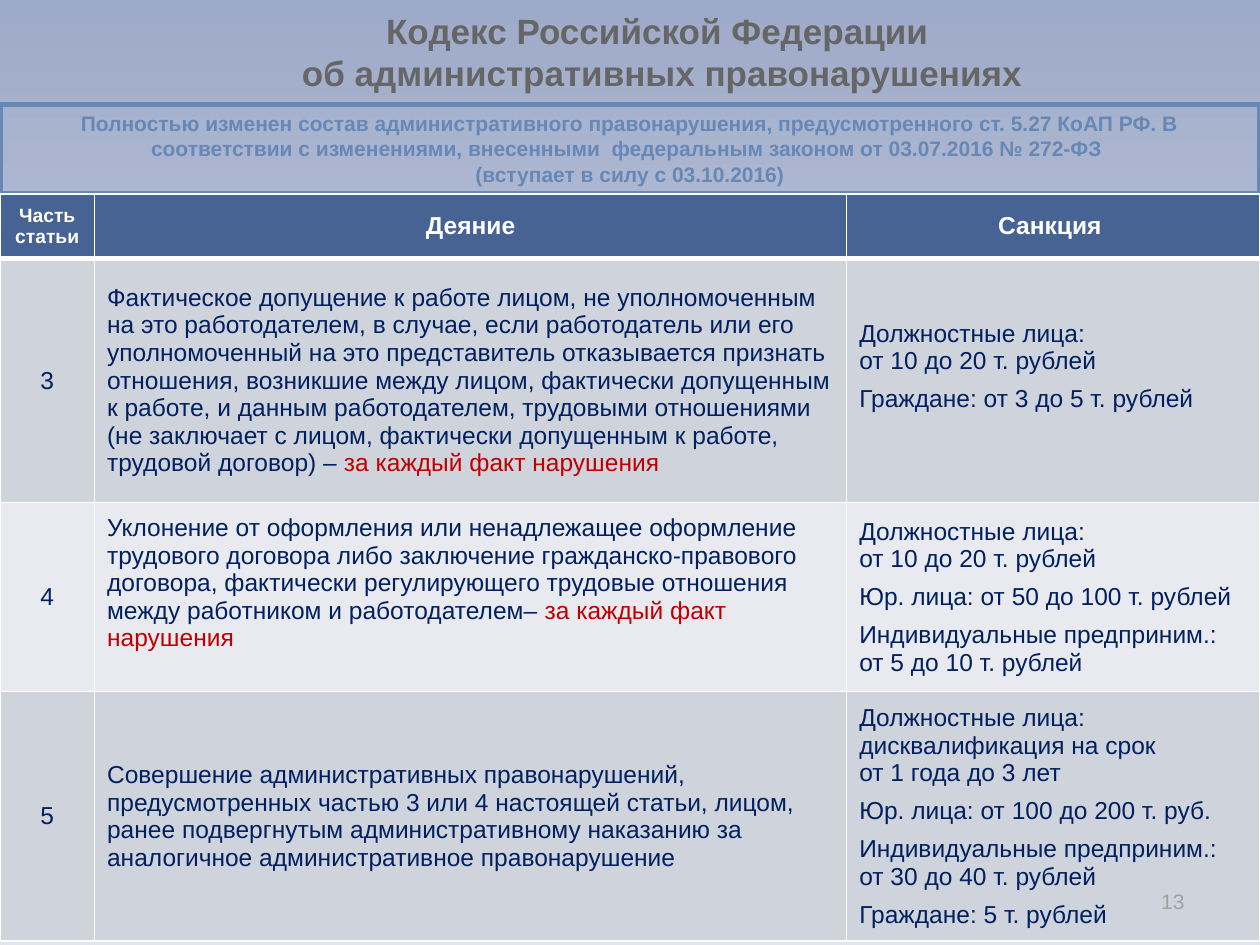
from copy import deepcopy
from dataclasses import dataclass

from lxml.etree import SubElement
from pptx import Presentation
from pptx.dml.color import RGBColor
from pptx.enum.shapes import MSO_SHAPE as Shape
from pptx.enum.text import MSO_ANCHOR as Anchor, PP_ALIGN as Align
from pptx.oxml.ns import qn
from pptx.util import Inches, Pt

NAVY, RED, WHITE = "002060", "C00000", "FFFFFF"
HEADER, DARK, LIGHT = "476394", "CFD3DC", "E9EAEF"
BLUE, GREY, PALE = "6688B6", "666666", "A0A0A0"
EACH_FACT = "за каждый факт нарушения"


@dataclass
class Article:
    """One clause of the article with its offence and sanctions."""
    clause: str
    offence: str
    sanctions: list[str]
    height: float
    fill: str
    accent: str = ""
    last_gap: int = 0
    offence_lift: float = 0
    sanction_lift: float = 0


HEADERS = [("Часть статьи", 11), ("Деяние", 14), ("Санкция ", 14)]
WIDTHS = [0.75, 5.97, 3.28]
HEADER_HEIGHT = 0.51
ARTICLES = [
    Article(
        "3",
        "Фактическое допущение к работе лицом, не уполномоченным на это работодателем, "
        "в случае, если работодатель или его уполномоченный на это представитель "
        "отказывается признать отношения, возникшие между лицом, фактически допущенным "
        "к работе, и данным работодателем, трудовыми отношениями (не заключает с лицом, "
        "фактически допущенным к работе, трудовой договор) – ",
        ["Должностные лица: \nот 10 до 20 т. рублей", "Граждане: от 3 до 5 т. рублей"],
        1.94, DARK, EACH_FACT, last_gap=12, sanction_lift=0.22),
    Article(
        "4",
        "Уклонение от оформления или ненадлежащее оформление трудового договора либо "
        "заключение гражданско-правового договора, фактически регулирующего трудовые "
        "отношения между работником и работодателем– ",
        ["Должностные лица: \nот 10 до 20 т. рублей",
         "Юр. лица: от 50 до 100 т. рублей",
         "Индивидуальные предприним.: \nот 5 до 10 т. рублей"],
        1.5, LIGHT, EACH_FACT, offence_lift=0.22),
    Article(
        "5",
        "Совершение административных правонарушений, предусмотренных частью 3 или 4 "
        "настоящей статьи, лицом, ранее подвергнутым административному наказанию за "
        "аналогичное административное правонарушение",
        ["Должностные лица: \nдисквалификация на срок \nот 1 года до 3 лет",
         "Юр. лица: от 100 до 200 т. руб.",
         "Индивидуальные предприним.: \nот 30 до 40 т. рублей",
         "Граждане: 5 т. рублей"],
        1.98, DARK),
]


def rgb(value: str) -> RGBColor:
    """Turn a hex string into a colour."""
    return RGBColor.from_string(value)


def place(shape, left: float, top: float, width: float, height: float) -> None:
    """Move and size a shape in inches."""
    shape.left, shape.top = Inches(left), Inches(top)
    shape.width, shape.height = Inches(width), Inches(height)


def write(para, text: str, size: int, color: str, bold=False, align=Align.LEFT) -> None:
    """Fill a paragraph with uniformly formatted text."""
    para.text = text
    para.alignment = align
    font = para.font
    font.name, font.size, font.bold = "Arial", Pt(size), bold
    font.color.rgb = rgb(color)


def style_cell(cell, fill: str, top=1, bottom=1, lift=0.0) -> None:
    """Give a cell its white borders, fill and margins."""
    properties = cell._tc.get_or_add_tcPr()
    for side, width in zip("LRTB", (1, 1, top, bottom)):
        line = SubElement(properties, qn(f"a:ln{side}"), w=str(Pt(width)))
        solid = SubElement(line, qn("a:solidFill"))
        SubElement(solid, qn("a:srgbClr"), val=WHITE)
    cell.fill.solid()
    cell.fill.fore_color.rgb = rgb(fill)
    cell.vertical_anchor = Anchor.MIDDLE
    cell.margin_left = cell.margin_right = Inches(0.1)
    cell.margin_top = Inches(0.05)
    cell.margin_bottom = Inches(0.05 + lift)


def fill_article(cells, article: Article, top: int) -> None:
    """Write one article into its table row."""
    clause, offence, sanction = cells
    for cell, lift in zip(cells, (0, article.offence_lift, article.sanction_lift)):
        style_cell(cell, article.fill, top=top, lift=lift)
    write(clause.text_frame.paragraphs[0], article.clause, 14, NAVY, align=Align.CENTER)

    para = offence.text_frame.paragraphs[0]
    write(para, article.offence, 14, NAVY)
    if article.accent:
        span = para.add_run()
        span.text = article.accent
        span.font.color.rgb = rgb(RED)

    frame = sanction.text_frame
    for index, text in enumerate(article.sanctions):
        para = frame.add_paragraph() if index else frame.paragraphs[0]
        write(para, text, 14, NAVY)
        para.space_after = Pt(6)
    para.space_after = Pt(article.last_gap)


def add_table(page) -> None:
    """Add the table of offences and sanctions."""
    heights = [HEADER_HEIGHT] + [article.height for article in ARTICLES]
    table = page.shapes.add_table(
        len(heights), len(WIDTHS), Inches(0), Inches(1.54),
        Inches(sum(WIDTHS)), Inches(sum(heights))).table
    for column, width in zip(table.columns, WIDTHS):
        column.width = Inches(width)
    for row, height in zip(table.rows, heights):
        row.height = Inches(height)
    for cell, (text, size) in zip(table.rows[0].cells, HEADERS):
        style_cell(cell, HEADER, bottom=3)
        write(cell.text_frame.paragraphs[0], text, size, WHITE, True, Align.CENTER)
    for index, article in enumerate(ARTICLES, 1):
        fill_article(list(table.rows[index].cells), article, 3 if index == 1 else 1)


def paint_background(page) -> None:
    """Paint the vertical three-stop gradient."""
    fill = page.background.fill
    fill.gradient()
    fill.gradient_angle = 270
    first = next(page.element.iter(qn("a:gs")))
    first.addnext(deepcopy(first))
    colors = ("9EAAC9", "C5CBDC", "E2E5ED")
    for stop, color, position in zip(fill.gradient_stops, colors, (0, 0.5, 1)):
        stop.color.rgb = rgb(color)
        stop.position = position


def main() -> None:
    """Build and save the slide."""
    deck = Presentation()
    deck.slide_width, deck.slide_height = Inches(10), Inches(7.5)
    page = deck.slides.add_slide(deck.slide_layouts[5])
    paint_background(page)

    title = page.shapes.title
    place(title, 1.15, -0.01, 8.21, 0.84)
    title.text_frame.vertical_anchor = Anchor.MIDDLE
    write(title.text_frame.paragraphs[0],
          "Кодекс Российской Федерации \nоб административных правонарушениях",
          20, GREY, True, Align.CENTER)

    banner = page.shapes.add_shape(
        Shape.RECTANGLE, Inches(0), Inches(0.83), Inches(10), Inches(0.71))
    banner.shadow.inherit = False
    banner.fill.background()
    banner.line.color.rgb = rgb(BLUE)
    banner.line.width = Pt(3)
    banner.text_frame.word_wrap = True
    banner.text_frame.vertical_anchor = Anchor.TOP
    write(banner.text_frame.paragraphs[0],
          "Полностью изменен состав административного правонарушения, предусмотренного "
          "ст. 5.27 КоАП РФ. В соответствии с изменениями, внесенными  федеральным "
          "законом от 03.07.2016 № 272-ФЗ \n(вступает в силу с 03.10.2016)",
          12, BLUE, True, Align.CENTER)

    add_table(page)

    number = page.shapes.add_textbox(Inches(7.17), Inches(6.95), Inches(2.33), Inches(0.4))
    number.text_frame.word_wrap = True
    number.text_frame.vertical_anchor = Anchor.MIDDLE
    write(number.text_frame.paragraphs[0], "13", 12, PALE, align=Align.RIGHT)
    deck.save("out.pptx")


if __name__ == "__main__":
    main()
